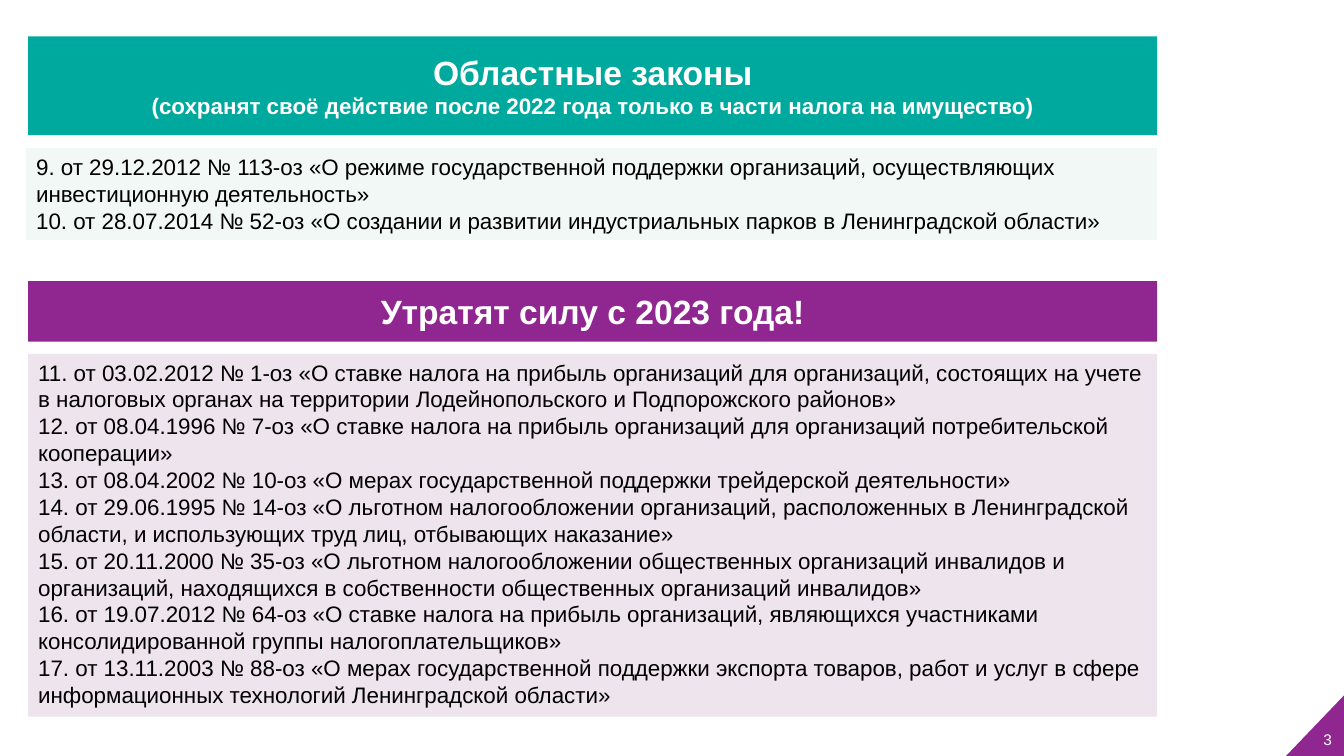
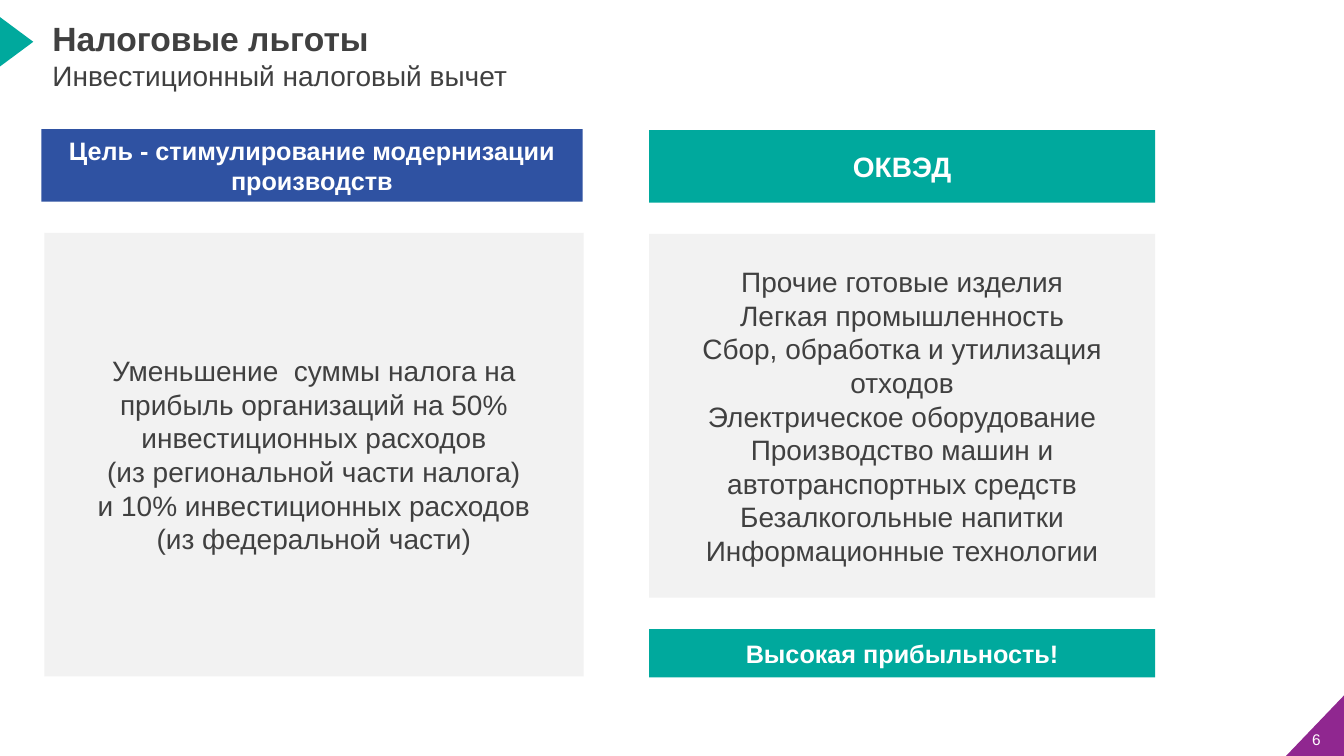
import dataclasses

import pptx
import pptx.dml.color
import pptx.enum.shapes
import pptx.enum.text
import pptx.util

SHAPE = pptx.enum.shapes.MSO_SHAPE
ANCHOR = pptx.enum.text.MSO_ANCHOR
ALIGN = pptx.enum.text.PP_ALIGN


@dataclasses.dataclass(frozen=True)
class Theme:
    """Colours, font and type sizes of the deck."""

    font: str = "Arial"
    teal: str = "00A99D"
    purple: str = "902790"
    blue: str = "2F52A2"
    mint: str = "F2F8F5"
    lilac: str = "EEE4EE"
    grey: str = "F2F2F2"
    white: str = "FFFFFF"
    black: str = "000000"
    dark: str = "404040"
    heading: int = 24
    body: int = 20
    label: int = 18
    law: int = 16
    number: int = 11
    number_leading: int = 17


class Deck:
    """Draws on the current page, on a grid of 160 columns by 90 rows."""

    columns, rows = 160, 90

    def __init__(self, theme):
        self.theme = theme
        self.file = pptx.Presentation()
        self.file.slide_width = pptx.util.Inches(13.33)
        self.file.slide_height = pptx.util.Inches(7.5)
        self.page = None

    def point(self, column, row):
        """Turn a grid position into slide units."""
        return (round(self.file.slide_width * column / self.columns),
                round(self.file.slide_height * row / self.rows))

    def area(self, left, top, width, height):
        """Turn a grid rectangle into slide units."""
        return self.point(left, top) + self.point(width, height)

    def paint(self, shape, colour):
        """Fill a shape with one plain colour."""
        shape.fill.solid()
        shape.fill.fore_color.rgb = pptx.dml.color.RGBColor.from_string(colour)

    def new_page(self, number, number_column):
        """Start a page with its title, corner and page number."""
        self.page = self.file.slides.add_slide(self.file.slide_layouts[5])
        builder = self.page.shapes.build_freeform(*self.point(153.1, 90))
        builder.add_line_segments([self.point(160, 82.8), self.point(160, 90)])
        self.plain(builder.convert_to_shape(), self.theme.purple)
        box = self.page.shapes.add_textbox(*self.area(number_column, 85.68, 3.6, 3.72))
        self.add_lines(box, [(str(number), self.theme.number, False)], self.theme.white)
        leading = pptx.util.Pt(self.theme.number_leading)
        box.text_frame.paragraphs[0].line_spacing = leading

    def plain(self, shape, colour):
        """Give a shape a flat fill without line or shadow."""
        shape.shadow.inherit = False
        shape.line.fill.background()
        self.paint(shape, colour)

    def add_lines(self, box, lines, colour, align=ALIGN.LEFT, anchor=ANCHOR.TOP):
        """Add (text, size, bold) lines, one paragraph each."""
        frame = box.text_frame
        frame.auto_size = pptx.enum.text.MSO_AUTO_SIZE.NONE
        frame.word_wrap = True
        frame.vertical_anchor = anchor
        for index, (text, size, bold) in enumerate(lines):
            para = frame.add_paragraph() if index else frame.paragraphs[0]
            para.alignment = align
            span = para.add_run()
            span.text = text
            span.font.name = self.theme.font
            span.font.size = pptx.util.Pt(size)
            span.font.bold = bold
            span.font.color.rgb = pptx.dml.color.RGBColor.from_string(colour)

    def title(self, area, lines, colour, fill=None, **layout):
        """Place the title, on a band if a fill is given."""
        box = self.page.shapes.title
        box.left, box.top, box.width, box.height = self.area(*area)
        if fill:
            self.paint(box, fill)
        self.add_lines(box, lines, colour, **layout)

    def marker(self):
        """Draw the pointer at the left edge beside the title."""
        pointer = self.page.shapes.add_shape(
            SHAPE.ISOSCELES_TRIANGLE, *self.area(-0.96, 3, 5.88, 3.96))
        pointer.rotation = 90
        self.plain(pointer, self.theme.teal)

    def panel(self, area, fill, lines, colour, **layout):
        """Draw a filled rectangle with text."""
        box = self.page.shapes.add_shape(SHAPE.RECTANGLE, *self.area(*area))
        self.plain(box, fill)
        self.add_lines(box, lines, colour, **layout)

    def band(self, area, fill, text, size):
        """Draw a heading band with bold white text."""
        self.panel(area, fill, [(text, size, True)], self.theme.white, **CENTRED)

    def laws(self, area, fill, texts):
        """Draw a panel that lists laws."""
        lines = [(text, self.theme.law, False) for text in texts]
        self.panel(area, fill, lines, self.theme.black)

    def card(self, area, texts):
        """Draw a grey card with centred lines."""
        lines = [(text, self.theme.body, False) for text in texts]
        self.panel(area, self.theme.grey, lines, self.theme.dark, **CENTRED)


CENTRED = {"align": ALIGN.CENTER, "anchor": ANCHOR.MIDDLE}

KEPT_LAWS = [
    "9. от 29.12.2012 № 113-оз «О режиме государственной поддержки организаций, осуществляющих инвестиционную деятельность»",
    "10. от 28.07.2014 № 52-оз «О создании и развитии индустриальных парков в Ленинградской области»",
]
ENDING_LAWS = [
    "11. от 03.02.2012 № 1-оз «О ставке налога на прибыль организаций для организаций, состоящих на учете в налоговых органах на территории Лодейнопольского и Подпорожского районов»",
    "12. от 08.04.1996 № 7-оз «О ставке налога на прибыль организаций для организаций потребительской кооперации»",
    "13. от 08.04.2002 № 10-оз «О мерах государственной поддержки трейдерской деятельности»",
    "14. от 29.06.1995 № 14-оз «О льготном налогообложении организаций, расположенных в Ленинградской области, и использующих труд лиц, отбывающих наказание»",
    "15. от 20.11.2000 № 35-оз «О льготном налогообложении общественных организаций инвалидов и организаций, находящихся в собственности общественных организаций инвалидов»",
    "16. от 19.07.2012 № 64-оз «О ставке налога на прибыль организаций, являющихся участниками консолидированной группы налогоплательщиков»",
    "17. от 13.11.2003 № 88-оз «О мерах государственной поддержки экспорта товаров, работ и услуг в сфере информационных технологий Ленинградской области»",
]
DEDUCTION = [
    "Уменьшение  суммы налога на прибыль организаций на 50% инвестиционных расходов",
    "(из региональной части налога)",
    "и 10% инвестиционных расходов",
    "(из федеральной части)",
]
INDUSTRIES = [
    "Прочие готовые изделия",
    "Легкая промышленность",
    "Сбор, обработка и утилизация отходов",
    "Электрическое оборудование",
    "Производство машин и автотранспортных средств",
    "Безалкогольные напитки",
    "Информационные технологии",
]


def regional_laws(deck):
    """Build the page on regional laws."""
    theme = deck.theme
    left, width = 3.36, 134.4
    deck.new_page(3, 156.36)
    deck.title((left, 4.32, width, 11.76), [
        ("Областные законы", theme.heading, True),
        ("(сохранят своё действие после 2022 года только в части налога на имущество)", theme.law, True),
    ], theme.white, theme.teal, **CENTRED)
    deck.laws((3.12, 17.64, 134.64, 10.92), theme.mint, KEPT_LAWS)
    deck.band((left, 33.48, width, 7.2), theme.purple, "Утратят силу с 2023 года!", theme.heading)
    deck.laws((left, 42.12, width, 43.2), theme.lilac, ENDING_LAWS)


def tax_deduction(deck):
    """Build the page on the investment tax deduction."""
    theme = deck.theme
    left, width = 77.28, 60.24
    deck.new_page(6, 155.04)
    deck.marker()
    deck.title((5.04, 1.56, 132.48, 10.08), [
        ("Налоговые льготы", theme.heading, True),
        ("Инвестиционный налоговый вычет", theme.body, False),
    ], theme.dark)
    deck.band((4.92, 15.36, 64.44, 8.64), theme.blue,
              "Цель - стимулирование модернизации производств", theme.label)
    deck.card((5.28, 27.72, 64.2, 52.8), DEDUCTION)
    deck.band((left, 15.48, width, 8.64), theme.teal, "ОКВЭД", theme.body)
    deck.card((left, 27.84, width, 43.32), INDUSTRIES)
    deck.band((left, 74.88, width, 5.76), theme.teal, "Высокая прибыльность!", theme.label)


def main():
    """Build both pages and save the deck."""
    deck = Deck(Theme())
    regional_laws(deck)
    tax_deduction(deck)
    deck.file.save("out.pptx")


if __name__ == "__main__":
    main()
